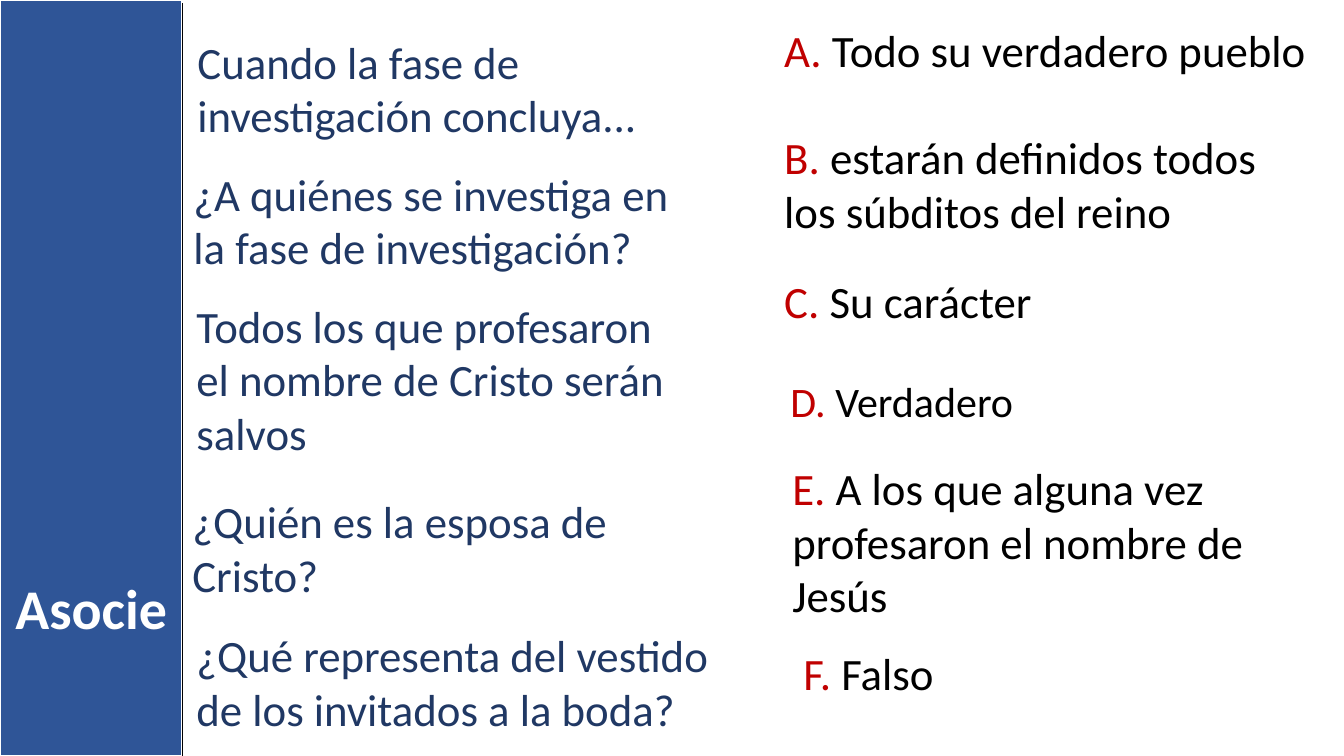
from lxml import etree
from pptx import Presentation
from pptx.dml.color import RGBColor
from pptx.enum.shapes import MSO_CONNECTOR, MSO_SHAPE
from pptx.enum.text import MSO_ANCHOR, MSO_AUTO_SIZE, PP_ALIGN
from pptx.oxml.ns import qn
from pptx.util import Inches, Pt

RECTANGLE = MSO_SHAPE.RECTANGLE
STRAIGHT = MSO_CONNECTOR.STRAIGHT
TOP, CENTER, LEFT = MSO_ANCHOR.TOP, PP_ALIGN.CENTER, PP_ALIGN.LEFT
NO_FIT, GROW = MSO_AUTO_SIZE.NONE, MSO_AUTO_SIZE.SHAPE_TO_FIT_TEXT

COLORS = {
    "band": "2F5597",
    "question": "203864",
    "letter": "C00000",
    "answer": "000000",
    "rule": "000000",
    "white": "FFFFFF",
}
WIDTH, HEIGHT, BAND_WIDTH = 13.33, 7.5, 1.81

# Left, top, width, height, text
QUESTIONS = [
    (1.86, 0.29, 4.89, 1.18, "Cuando la fase de investigación concluya..."),
    (1.82, 1.6, 5.16, 1.18, "¿A quiénes se investiga en la fase de investigación?"),
    (1.85, 2.91, 5.1, 1.72, "Todos los que profesaron el nombre de Cristo serán salvos"),
    (1.81, 4.85, 4.94, 1.18, "¿Quién es la esposa de Cristo?"),
    (1.85, 6.18, 5.6, 1.18, "¿Qué representa del vestido de los invitados a la boda?"),
]
# Left, top, width, height, text size, text; letters follow the order
ANSWERS = [
    (7.68, 0.18, 5.47, 0.64, 32, "Todo su verdadero pueblo"),
    (7.68, 1.24, 5.47, 1.18, 32, "estarán definidos todos los súbditos del reino"),
    (7.68, 2.67, 4.73, 0.64, 32, "Su carácter"),
    (7.74, 3.68, 4.75, 0.61, 30, "Verdadero"),
    (7.76, 4.52, 5.05, 1.72, 32, "A los que alguna vez profesaron el nombre de Jesús"),
    (7.87, 6.36, 4.62, 0.64, 32, "Falso"),
]


class SlideBuilder:
    """Holds the style and the current slide."""

    def __init__(self, page, font="Calibri"):
        self.page = page
        self.font = font

    def color(self, name):
        return RGBColor.from_string(COLORS[name])

    def fill_text(self, shape, spans, size, align=LEFT, bold=False, fit=GROW):
        frame = shape.text_frame
        layout = {
            "word_wrap": True,
            "auto_size": fit,
            "vertical_anchor": TOP,
            "margin_left": Inches(0.1),
            "margin_right": Inches(0.1),
            "margin_top": Inches(0.05),
            "margin_bottom": Inches(0.05),
        }
        for name, value in layout.items():
            setattr(frame, name, value)
        para = frame.paragraphs[0]
        para.alignment = align
        for text, color in spans:
            span = para.add_run()
            span.text = text
            style = {"name": self.font, "size": Pt(size), "bold": bold}
            for name, value in style.items():
                setattr(span.font, name, value)
            span.font.color.rgb = self.color(color)

    def text(self, bounds, spans, size=32):
        box = self.page.shapes.add_textbox(*map(Inches, bounds))
        self.fill_text(box, spans, size)

    def title(self, bounds, text, size):
        title = self.page.shapes.title
        for name, value in zip(("left", "top", "width", "height"), bounds):
            setattr(title, name, Inches(value))
        self.fill_text(title, [(text, "white")], size, CENTER, True, NO_FIT)
        return title

    def band(self, bounds):
        band = self.page.shapes.add_shape(RECTANGLE, *map(Inches, bounds))
        band.shadow.inherit = False
        band.fill.solid()
        band.fill.fore_color.rgb = self.color("band")
        band.line.color.rgb = self.color("white")
        band.line.width = Pt(1.5)
        return band

    def rule(self, start, end):
        rule = self.page.shapes.add_connector(STRAIGHT, *map(Inches, start + end))
        rule.line.color.rgb = self.color("rule")
        rule.line.width = Pt(1)
        etree.SubElement(rule.element.spPr, qn("a:effectLst"))


def main():
    deck = Presentation()
    deck.slide_width, deck.slide_height = Inches(WIDTH), Inches(HEIGHT)
    builder = SlideBuilder(deck.slides.add_slide(deck.slide_layouts[5]))

    # Side band, placed behind the title
    band = builder.band((0, 0, BAND_WIDTH, HEIGHT))
    title = builder.title((0, 5.64, BAND_WIDTH, 0.77), "Asocie", 40)
    title.element.addprevious(band.element)

    # Questions
    for *bounds, text in QUESTIONS:
        builder.text(bounds, [(text, "question")])

    # Lettered answers
    for letter, (*bounds, size, text) in zip("ABCDEF", ANSWERS):
        builder.text(bounds, [(f"{letter}. ", "letter"), (text, "answer")], size)

    # Rule along the band's edge
    builder.rule((BAND_WIDTH, 0.03), (BAND_WIDTH, HEIGHT))

    deck.save("out.pptx")


if __name__ == "__main__":
    main()
